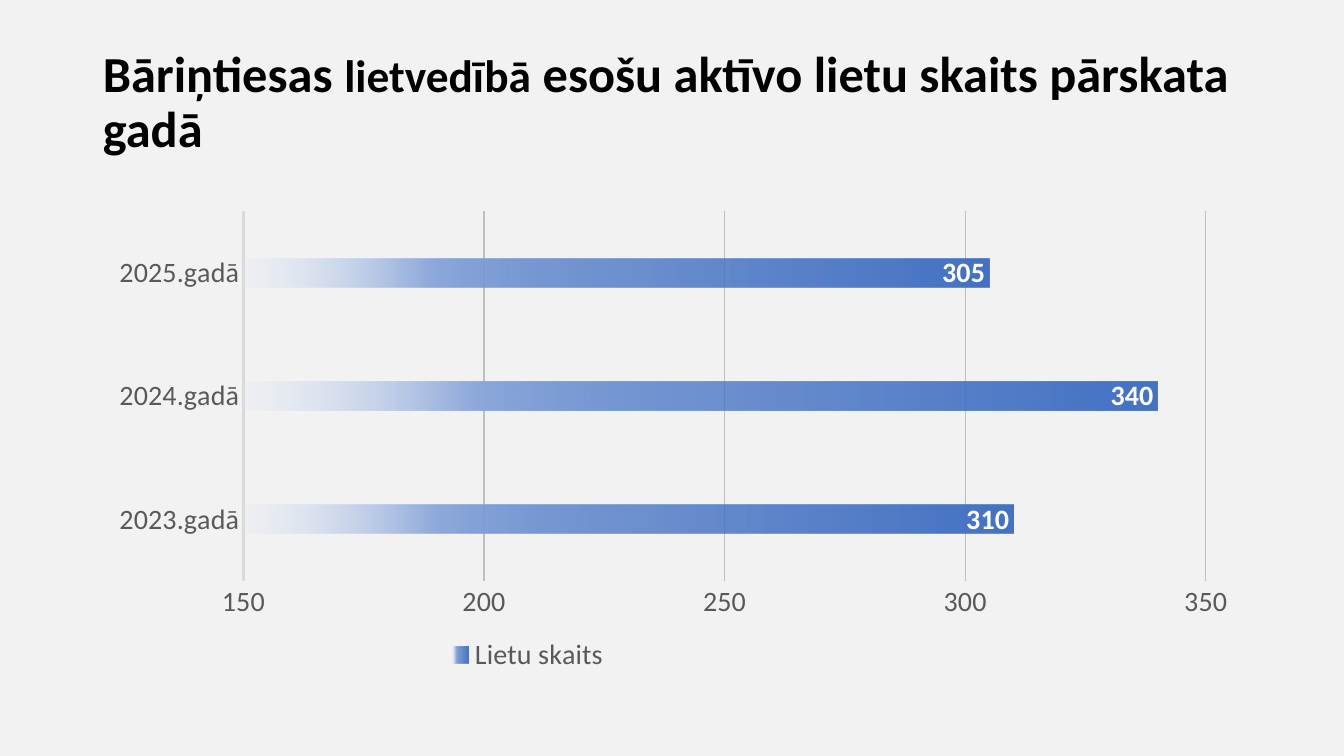
from dataclasses import dataclass

from pptx import Presentation
from pptx.chart.data import CategoryChartData
from pptx.dml.color import RGBColor
from pptx.enum import chart as ch, text as tx
from pptx.oxml import parse_xml
from pptx.oxml.ns import nsdecls, qn
from pptx.util import Inches, Pt


@dataclass(frozen=True)
class Theme:
    font: str = "Calibri"
    back: str = "F2F2F2"
    ink: str = "000000"
    grey: str = "595959"
    axis: str = "D9D9D9"
    grid: str = "BFBFBF"
    white: str = "FFFFFF"
    head: float = 36
    small: float = 32.4
    body: float = 20
    # position %, colour, opacity %
    fade: tuple = ((0, "4472C4", 100), (51, "4472C4", 75),
                   (75, "8FAADC", 100), (100, "DAE3F3", 15))


THEME = Theme()


def style(font, size, color, bold=False):
    font.name, font.size, font.bold = THEME.font, Pt(size), bold
    font.color.rgb = RGBColor.from_string(color)


def rule(line, color, width):
    line.color.rgb = RGBColor.from_string(color)
    line.width = Pt(width)


def layout(x, y, w, h, inner=False):
    """Return a manual chart layout in fractions of the chart box."""
    target = '<c:layoutTarget val="inner"/>' if inner else ""
    modes = "".join(f'<c:{k}Mode val="edge"/>' for k in "xy")
    sizes = "".join(f'<c:{k} val="{v}"/>' for k, v in zip("xywh", (x, y, w, h)))
    return parse_xml(f'<c:layout {nsdecls("c")}><c:manualLayout>{target}{modes}'
                     f'{sizes}</c:manualLayout></c:layout>')


def fade(fill):
    """Fill with the theme fade, running from right to left."""
    fill.gradient()
    stops = "".join(
        f'<a:gs pos="{pos * 1000}"><a:srgbClr val="{color}">'
        f'<a:alpha val="{alpha * 1000}"/></a:srgbClr></a:gs>'
        for pos, color, alpha in THEME.fade)
    return parse_xml(f'<a:gradFill {nsdecls("a")} rotWithShape="1"><a:gsLst>{stops}'
                     '</a:gsLst><a:lin ang="10800000" scaled="0"/></a:gradFill>')


def title(slide, box):
    shape = slide.shapes.title
    shape.left, shape.top, shape.width, shape.height = map(Inches, box)
    frame = shape.text_frame
    frame.word_wrap = True
    frame.auto_size = tx.MSO_AUTO_SIZE.NONE
    frame.vertical_anchor = tx.MSO_ANCHOR.MIDDLE
    para = frame.paragraphs[0]
    para.alignment = tx.PP_ALIGN.LEFT
    para.line_spacing = 0.9
    style(para.font, THEME.head, THEME.ink, True)
    for words, size in (("Bāriņtiesas ", THEME.head), ("lietvedībā", THEME.small),
                        (" esošu aktīvo lietu skaits pārskata gadā", THEME.head)):
        run = para.add_run()
        run.text = words
        run.font.size = Pt(size)


def axes(chart):
    cat, val = chart.category_axis, chart.value_axis
    for axis in (cat, val):
        axis.major_tick_mark = axis.minor_tick_mark = ch.XL_TICK_MARK.NONE
        style(axis.tick_labels.font, THEME.body, THEME.grey)
    cat.has_major_gridlines = False
    rule(cat.format.line, THEME.axis, 1.5)
    val.minimum_scale, val.maximum_scale, val.major_unit = 150, 350, 50
    val.format.line.fill.background()
    val.has_major_gridlines = True
    rule(val.major_gridlines.format.line, THEME.grid, 0.75)


def bars(chart):
    plot = chart.plots[0]
    plot.gap_width, plot.overlap = 326, -58
    plot.vary_by_categories = False
    series = plot.series[0]
    grad = fade(series.format.fill)
    old = series.format.fill._xPr.find(qn("a:gradFill"))
    old.getparent().replace(old, grad)
    labels = series.data_labels
    labels.show_value = True
    labels.position = ch.XL_LABEL_POSITION.INSIDE_END
    style(labels.font, THEME.body, THEME.white, True)


def legend(chart):
    chart.has_legend = True
    key = chart.legend
    key.position = ch.XL_LEGEND_POSITION.BOTTOM
    key.include_in_layout = False
    style(key.font, THEME.body, THEME.grey)
    root = key._element
    for old in root.findall(qn("c:layout")):
        root.remove(old)
    root.find(qn("c:legendPos")).addnext(layout(0.3, 0.9, 0.15, 0.09))


def cases(slide, box):
    data = CategoryChartData()
    data.categories = ["2023.gadā", "2024.gadā", "2025.gadā"]
    data.add_series("Lietu skaits", (310, 340, 305))
    chart = slide.shapes.add_chart(ch.XL_CHART_TYPE.BAR_CLUSTERED,
                                   *map(Inches, box), data).chart
    chart.has_title = False
    style(chart.font, THEME.body, THEME.ink)
    axes(chart)
    bars(chart)
    legend(chart)
    area = chart._chartSpace.chart.plotArea
    for old in area.findall(qn("c:layout")):
        area.remove(old)
    area.insert(0, layout(0.13, 0.02, 0.83, 0.77, inner=True))


def main():
    deck = Presentation()
    deck.slide_width, deck.slide_height = Inches(13.33), Inches(7.5)
    slide = deck.slides.add_slide(deck.slide_layouts[5])
    slide.background.fill.solid()
    slide.background.fill.fore_color.rgb = RGBColor.from_string(THEME.back)
    title(slide, (0.92, 0.4, 11.5, 1.26))
    cases(slide, (0.92, 2, 11.5, 4.76))
    deck.save("out.pptx")


if __name__ == "__main__":
    main()
